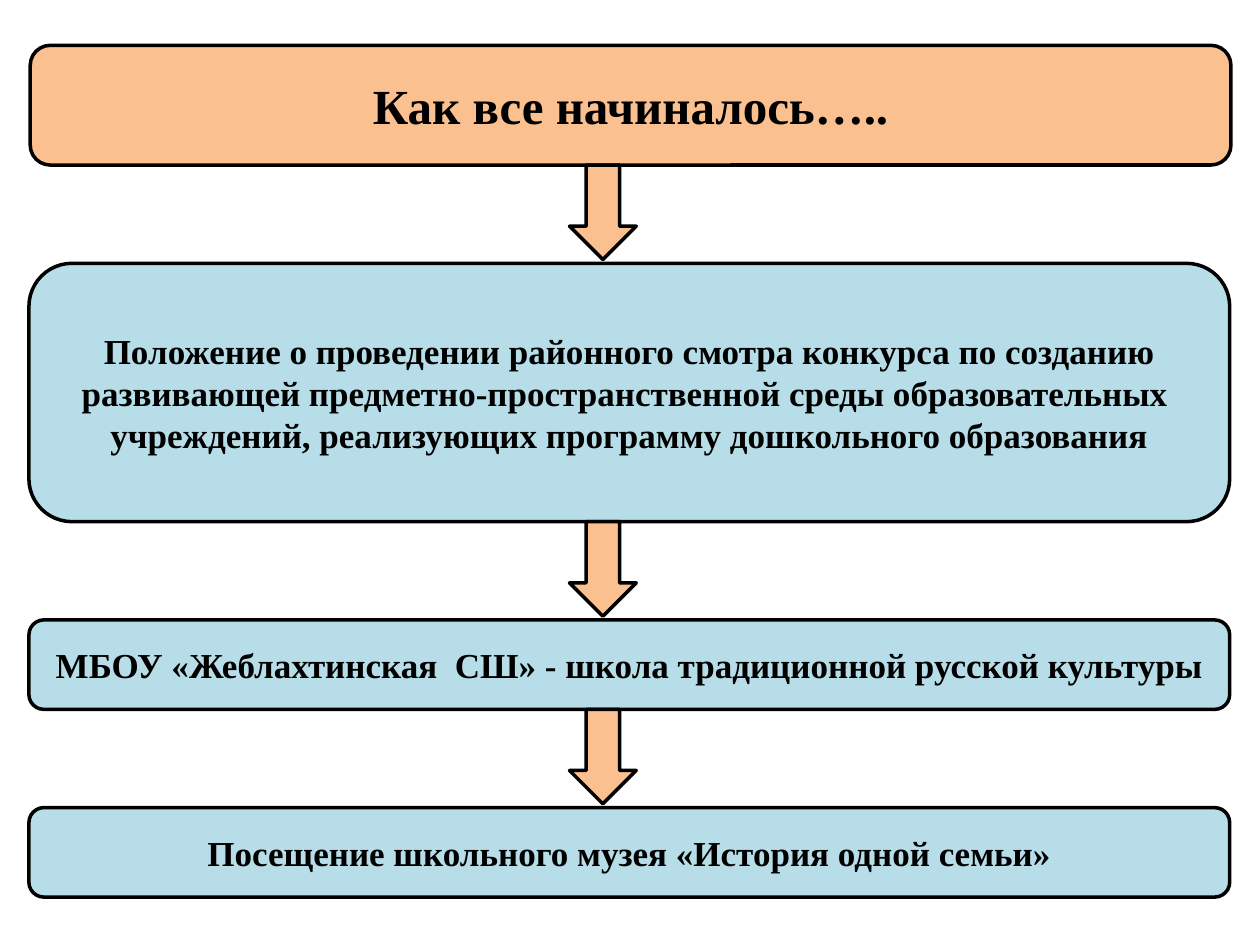
from dataclasses import dataclass

from pptx import Presentation
from pptx.dml.color import RGBColor
from pptx.enum.shapes import MSO_SHAPE as Shape
from pptx.enum.text import MSO_ANCHOR as Anchor, PP_ALIGN as Align
from pptx.util import Inches, Pt


@dataclass(frozen=True)
class Theme:
    font: str = "Times New Roman"
    heading_size: int = 28
    body_size: int = 20
    ink: str = "000000"
    accent: str = "FAC090"
    step: str = "B7DEE8"
    line_width: int = 2


def write_text(shape, text, *, font, size, color, bold=True, align=Align.CENTER):
    frame = shape.text_frame
    frame.word_wrap = True
    frame.vertical_anchor = Anchor.MIDDLE
    paragraph = frame.paragraphs[0]
    paragraph.alignment = align
    run = paragraph.add_run()
    run.text = text
    run.font.name = font
    run.font.size = Pt(size)
    run.font.bold = bold
    run.font.color.rgb = RGBColor.from_string(color)


class FlowSlide:
    def __init__(self, slide, theme):
        self.slide = slide
        self.theme = theme

    def outlined(self, kind, left, top, width, height, fill):
        shape = self.slide.shapes.add_shape(
            kind, Inches(left), Inches(top), Inches(width), Inches(height))
        shape.shadow.inherit = False
        shape.fill.solid()
        shape.fill.fore_color.rgb = RGBColor.from_string(fill)
        shape.line.color.rgb = RGBColor.from_string(self.theme.ink)
        shape.line.width = Pt(self.theme.line_width)
        return shape

    def box(self, text, left, top, height, fill, size):
        panel = self.outlined(Shape.ROUNDED_RECTANGLE, left, top, 9.53, height, fill)
        write_text(panel, text, font=self.theme.font, size=size, color=self.theme.ink)

    def arrow(self, top):
        self.outlined(Shape.DOWN_ARROW, 4.52, top, 0.53, 0.75, self.theme.accent)


def main():
    deck = Presentation()
    deck.slide_width, deck.slide_height = Inches(10), Inches(7.5)
    theme = Theme()
    flow = FlowSlide(deck.slides.add_slide(deck.slide_layouts[6]), theme)

    # Heading
    heading_top, heading_height = 0.36, 0.95
    flow.box("Как все начиналось…..", 0.24, heading_top, heading_height,
             theme.accent, theme.heading_size)

    # Steps, each reached by an arrow from the box above
    steps = [
        ("Положение о проведении районного смотра конкурса по созданию "
         "развивающей предметно-пространственной среды образовательных  "
         "учреждений, реализующих программу дошкольного образования", 2.05),
        ("МБОУ «Жеблахтинская  СШ» - школа традиционной русской культуры", 0.71),
        ("Посещение школьного музея «История одной семьи»", 0.71),
    ]
    gap = 0.78
    bottom = heading_top + heading_height
    for text, height in steps:
        flow.arrow(bottom)
        flow.box(text, 0.23, bottom + gap, height, theme.step, theme.body_size)
        bottom += gap + height

    deck.save("out.pptx")


if __name__ == "__main__":
    main()
